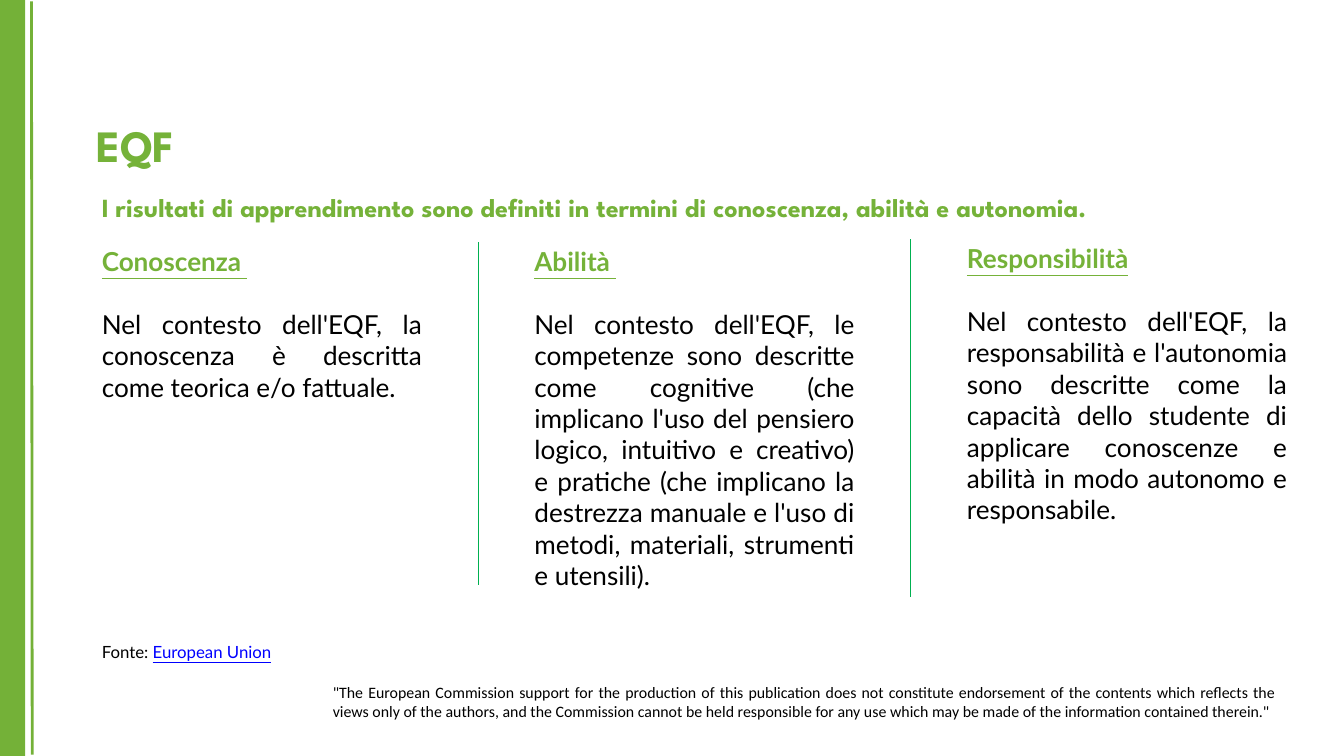
from dataclasses import dataclass

from lxml.etree import SubElement
from pptx import Presentation
from pptx.dml.color import RGBColor
from pptx.enum.shapes import MSO_CONNECTOR, MSO_SHAPE
from pptx.enum.text import MSO_ANCHOR, MSO_AUTO_SIZE, PP_ALIGN
from pptx.oxml.ns import qn
from pptx.util import Pt

PX = 9525  # EMU per px, 96 px to the inch


@dataclass(frozen=True)
class Theme:
    green: RGBColor = RGBColor(0x75, 0xB2, 0x39)
    bar: RGBColor = RGBColor(0x74, 0xB1, 0x38)
    divider: RGBColor = RGBColor(0x00, 0xB0, 0x50)
    black: RGBColor = RGBColor(0, 0, 0)
    link: RGBColor = RGBColor(0, 0, 0xFF)
    display: str = "League Spartan"
    text: str = "Lato"
    note: str = "Calibri"
    title_pt: int = 48
    body_pt: int = 28
    source_pt: int = 18
    note_pt: int = 17


theme = Theme()

prs = Presentation()
prs.slide_width, prs.slide_height = 1920 * PX, 1080 * PX
slide = prs.slides.add_slide(prs.slide_layouts.get_by_name("Title Only"))


def write(sp, box, paragraphs):
    """Place sp at box (px) and fill it; a paragraph is (alignment, space before, runs),
    a run is (text, font, size, colour, bold, underline)."""
    sp.left, sp.top, sp.width, sp.height = (v * PX for v in box)
    tf = sp.text_frame
    tf.word_wrap = True
    tf.auto_size = MSO_AUTO_SIZE.NONE
    tf.vertical_anchor = MSO_ANCHOR.TOP
    for i, (align, before, runs) in enumerate(paragraphs):
        p = tf.add_paragraph() if i else tf.paragraphs[0]
        p.alignment = align
        p.space_before = Pt(before)
        for text, font, size, colour, bold, underline in runs:
            r = p.add_run()
            r.text = text
            r.font.name, r.font.size = font, Pt(size)
            r.font.color.rgb = colour
            r.font.bold, r.font.underline = bold, underline


def add_rule(x1, y1, x2, y2, colour, weight):
    line = slide.shapes.add_connector(
        MSO_CONNECTOR.STRAIGHT, x1 * PX, y1 * PX, x2 * PX, y2 * PX)
    line.line.color.rgb = colour
    line.line.width = Pt(weight)
    SubElement(line._element.spPr, qn("a:effectLst"))


# Green edge
bar = slide.shapes.add_shape(MSO_SHAPE.RECTANGLE, 0, 0, 36 * PX, 1080 * PX)
bar.shadow.inherit = False
bar.fill.solid()
bar.fill.fore_color.rgb = theme.bar
bar.line.fill.background()
add_rule(45, 2, 46, 1078, theme.bar, 3)

# Title and lead sentence
write(slide.shapes.title, (128, 164, 1760, 87), [
    (PP_ALIGN.LEFT, 0, [("EQF", theme.display, theme.title_pt, theme.green, True, False)])])

lead = "I risultati di apprendimento sono definiti in termini di conoscenza, abilità e autonomia."
write(slide.shapes.add_textbox(0, 0, 0, 0), (136, 268, 1592, 55), [
    (PP_ALIGN.LEFT, 0, [(lead, theme.display, theme.body_pt, theme.green, True, False)])])

# Three columns: heading, text, top, box height, bottom of the divider on the left
columns = [
    ("Conoscenza ",
     "Nel contesto dell'EQF, la conoscenza è descritta come teorica e/o fattuale.",
     346, 236, None),
    ("Abilità ",
     "Nel contesto dell'EQF, le competenze sono descritte come cognitive (che implicano "
     "l'uso del pensiero logico, intuitivo e creativo) e pratiche (che implicano la "
     "destrezza manuale e l'uso di metodi, materiali, strumenti e utensili).",
     346, 553, 836),
    ("Responsibilità",
     "Nel contesto dell'EQF, la responsabilità e l'autonomia sono descritte come la "
     "capacità dello studente di applicare conoscenze e abilità in modo autonomo e "
     "responsabile.",
     342, 462, 853),
]
line_gap = 1.2 * theme.body_pt
for i, (heading, body, top, height, divider_end) in enumerate(columns):
    left = 136 + i * 618
    write(slide.shapes.add_textbox(0, 0, 0, 0), (left, top, 476, height), [
        (PP_ALIGN.LEFT, 0, [(heading, theme.text, theme.body_pt, theme.green, True, True)]),
        (PP_ALIGN.JUSTIFY, line_gap,
         [(body, theme.text, theme.body_pt, theme.black, False, False)])])
    if divider_end:
        add_rule(left - 71, top, left - 71, divider_end, theme.divider, 0.75)

# Source and disclaimer
write(slide.shapes.add_textbox(0, 0, 0, 0), (136, 912, 634, 38), [
    (PP_ALIGN.LEFT, 0, [
        ("Fonte: ", theme.text, theme.source_pt, theme.black, False, False),
        ("European Union", theme.text, theme.source_pt, theme.link, False, True)])])

disclaimer = (
    '"The European Commission support for the production of this publication does not '
    "constitute endorsement of the contents which reflects the views only of the authors, "
    "and the Commission cannot be held responsible for any use which may be made of the "
    'information contained therein."')
write(slide.shapes.add_textbox(0, 0, 0, 0), (466, 971, 1366, 64), [
    (PP_ALIGN.JUSTIFY, 0,
     [(disclaimer, theme.note, theme.note_pt, theme.black, False, False)])])

prs.save("out.pptx")
